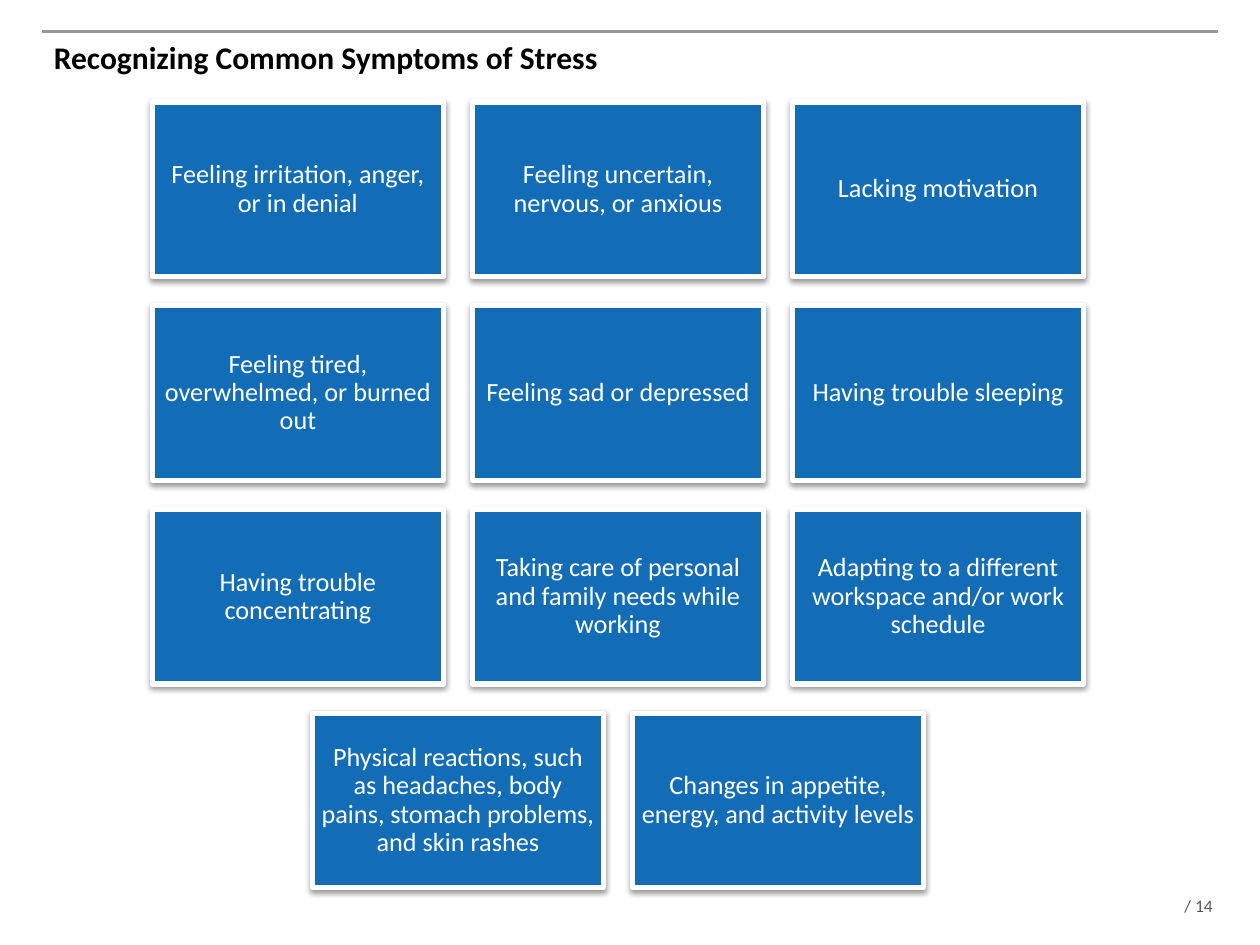
from dataclasses import dataclass

from lxml.etree import fromstring
from pptx import Presentation
from pptx.dml.color import RGBColor
from pptx.enum.shapes import MSO_CONNECTOR, MSO_SHAPE
from pptx.enum.text import MSO_ANCHOR, PP_ALIGN
from pptx.oxml.ns import nsdecls
from pptx.util import Inches, Pt


@dataclass(frozen=True)
class Theme:
    font: str = "Calibri"
    ink: str = "000000"
    page: str = "595959"
    rule: str = "969696"
    card: str = "126DB6"
    light: str = "FFFFFF"
    title_size: int = 18
    card_size: int = 15
    page_size: int = 10


THEME = Theme()
WIDE, HIGH = 10, 7.5
COLS = 3
GAP = 0.1  # share of a card's width
RATIO = 0.6  # card height to width
SYMPTOMS = [
    "Feeling irritation, anger, or in denial",
    "Feeling uncertain, nervous, or anxious",
    "Lacking motivation",
    "Feeling tired, overwhelmed, or burned out",
    "Feeling sad or depressed",
    "Having trouble sleeping",
    "Having trouble concentrating",
    "Taking care of personal and family needs while working",
    "Adapting to a different workspace and/or work schedule",
    "Physical reactions, such as headaches, body pains, stomach problems, and skin rashes",
    "Changes in appetite, energy, and activity levels",
]


def color(code):
    return RGBColor.from_string(code)


def write(shape, text, *, size, ink, bold=False, align=PP_ALIGN.LEFT,
          anchor=MSO_ANCHOR.TOP, inset=(0, 0), lead=None):
    frame = shape.text_frame
    frame.word_wrap = True
    frame.vertical_anchor = anchor
    frame.margin_left = frame.margin_right = Inches(inset[0])
    frame.margin_top = frame.margin_bottom = Inches(inset[1])
    line = frame.paragraphs[0]
    line.alignment = align
    line.line_spacing = lead
    run = line.add_run()
    run.text = text
    run.font.name = THEME.font
    run.font.size = Pt(size)
    run.font.bold = bold
    run.font.color.rgb = color(ink)


def effects(shape, inner=""):
    """Set the shape's effect list; an empty one means no shadow."""
    shape._element.spPr.append(fromstring(
        f'<a:effectLst {nsdecls("a")}>{inner}</a:effectLst>'))


def shade(shape):
    effects(shape, f'<a:outerShdw blurRad="{Pt(3.1)}" dist="{Pt(1.6)}" '
                   'dir="5400000" rotWithShape="0"><a:srgbClr val="000000">'
                   '<a:alpha val="38000"/></a:srgbClr></a:outerShdw>')


def header(slide, left, top, width, height):
    rule = slide.shapes.add_connector(
        MSO_CONNECTOR.STRAIGHT, Inches(left), Inches(top),
        Inches(left + width), Inches(top))
    rule.line.color.rgb = color(THEME.rule)
    rule.line.width = Pt(2)
    effects(rule)
    title = slide.shapes.add_textbox(*map(Inches, (left, top, width, height)))
    write(title, "Recognizing Common Symptoms of Stress", bold=True,
          size=THEME.title_size, ink=THEME.ink, inset=(0.1, 0.05))


def card(slide, text, left, top, width, height):
    box = slide.shapes.add_shape(
        MSO_SHAPE.RECTANGLE, *map(Inches, (left, top, width, height)))
    box.fill.solid()
    box.fill.fore_color.rgb = color(THEME.card)
    box.line.color.rgb = color(THEME.light)
    box.line.width = Pt(3)
    shade(box)
    write(box, text, size=THEME.card_size, ink=THEME.light, lead=0.9,
          align=PP_ALIGN.CENTER, anchor=MSO_ANCHOR.MIDDLE, inset=(0.06, 0.06))


def cards(slide, left, top, width):
    """Fill rows of cards, each row centred in the width."""
    wide = width / (COLS + GAP * (COLS - 1))
    high, gap = wide * RATIO, wide * GAP
    for start in range(0, len(SYMPTOMS), COLS):
        row = SYMPTOMS[start:start + COLS]
        shift = (COLS - len(row)) * (wide + gap) / 2
        y = top + start // COLS * (high + gap)
        for col, text in enumerate(row):
            card(slide, text, left + shift + col * (wide + gap), y, wide, high)


def footer(slide, left, top, width, height):
    box = slide.shapes.add_textbox(*map(Inches, (left, top, width, height)))
    write(box, "/ 14", size=THEME.page_size, ink=THEME.page)


def main():
    deck = Presentation()
    deck.slide_width, deck.slide_height = Inches(WIDE), Inches(HIGH)
    slide = deck.slides.add_slide(deck.slide_layouts[6])
    footer(slide, 0.94 * WIDE, 7.1, 0.06 * WIDE, 0.17)
    header(slide, 0.33, 0.25, WIDE - 2 * 0.33, 0.5)
    cards(slide, 1.21, 0.81, 7.39)
    deck.save("out.pptx")


if __name__ == "__main__":
    main()
